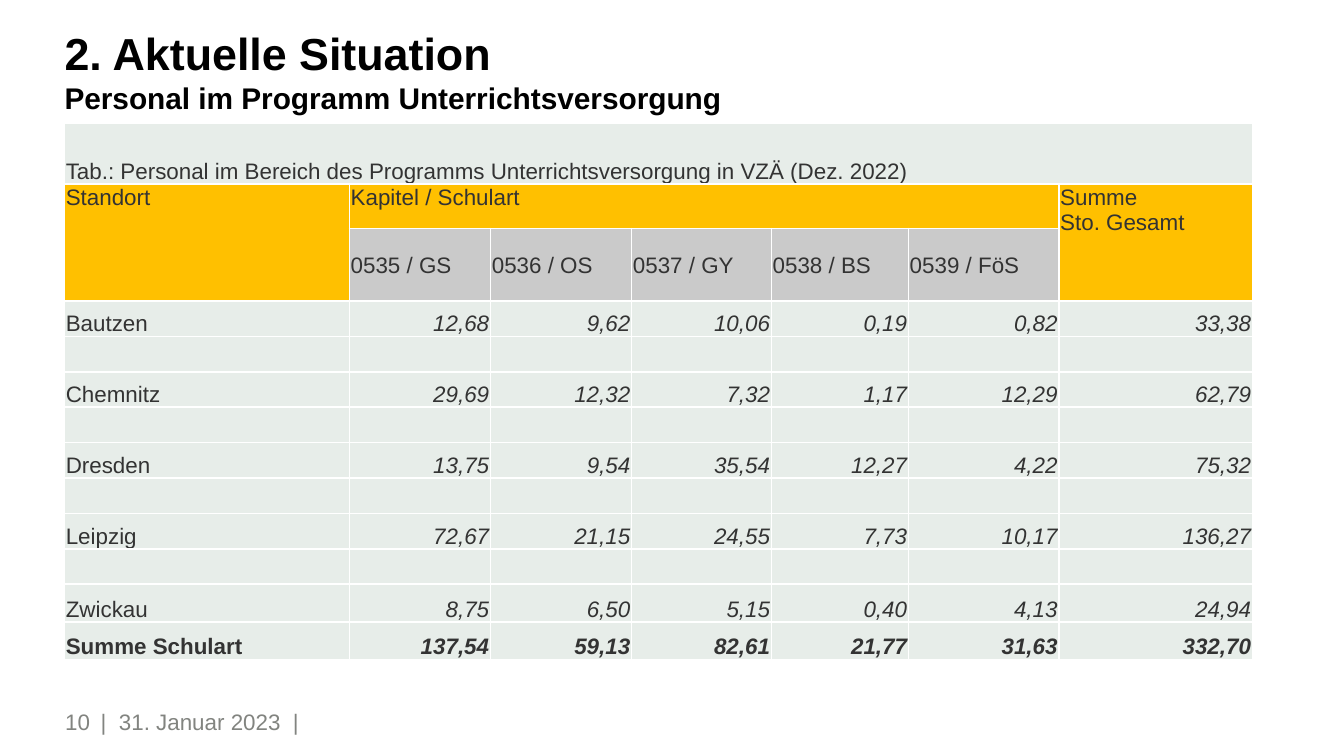
from lxml.etree import SubElement
from pptx import Presentation
from pptx.dml.color import RGBColor
from pptx.enum.text import MSO_ANCHOR, MSO_AUTO_SIZE, PP_ALIGN
from pptx.oxml.ns import qn
from pptx.util import Inches, Pt

COLORS = {
    "title": "000000", "text": "333333", "footer": "828480", "border": "FFFFFF",
    "body": "E7EDE9", "header": "FFC000", "subheader": "CACACA",
}


def add_run(p, text, size, color, bold=False, italic=False):
    r = p.add_run()
    r.text = text
    r.font.name = "Arial"
    r.font.size = Pt(size)
    r.font.bold = bold
    r.font.italic = italic
    r.font.color.rgb = RGBColor.from_string(COLORS[color])


def style_cell(cell, color, anchor):
    """Set margins, white borders and fill; borders must precede the fill."""
    cell.margin_left = cell.margin_right = cell.margin_top = Inches(0.01)
    cell.margin_bottom = 0
    cell.vertical_anchor = anchor
    tc_pr = cell._tc.get_or_add_tcPr()
    for side in ("a:lnL", "a:lnR", "a:lnT", "a:lnB"):
        ln = SubElement(tc_pr, qn(side), w=str(Pt(1)))
        fill = SubElement(ln, qn("a:solidFill"))
        SubElement(fill, qn("a:srgbClr"), val=COLORS["border"])
    cell.fill.solid()
    cell.fill.fore_color.rgb = RGBColor.from_string(COLORS[color])


prs = Presentation()
prs.slide_width = Inches(10)
prs.slide_height = Inches(10 * 9 / 16)
s = prs.slides.add_slide(prs.slide_layouts[5])

# Title
title = s.shapes.title
title.left, title.top = Inches(0.48), Inches(0.45)
title.width, title.height = Inches(7.28), Inches(0.41)
tf = title.text_frame
tf.auto_size = MSO_AUTO_SIZE.NONE
tf.word_wrap = True
tf.vertical_anchor = MSO_ANCHOR.BOTTOM
tf.margin_left = tf.margin_right = tf.margin_top = tf.margin_bottom = 0
p = tf.paragraphs[0]
p.alignment = PP_ALIGN.LEFT
add_run(p, "2. Aktuelle Situation", 24, "title", bold=True)
p.add_line_break()
add_run(p, "Personal im Programm Unterrichtsversorgung", 16, "title", bold=True)

# Footer
for left, width, text, align in [
    (0.75, 4.96, "|  31. Januar 2023  |", PP_ALIGN.LEFT),
    (0, 0.67, "10", PP_ALIGN.RIGHT),
]:
    box = s.shapes.add_textbox(Inches(left), Inches(5.11), Inches(width), Inches(0.52))
    tf = box.text_frame
    tf.word_wrap = True
    tf.vertical_anchor = MSO_ANCHOR.MIDDLE
    tf.margin_left = tf.margin_right = tf.margin_top = tf.margin_bottom = 0
    p = tf.paragraphs[0]
    p.alignment = align
    add_run(p, text, 12, "footer")

# Table: the eight rows from the first site to the last gap share what is left
table_height = 3.99
header_heights = [0.45, 0.33, 0.54]
last_heights = [0.28, 0.28]
site_height = (table_height - sum(header_heights) - sum(last_heights)) / 8
row_heights = header_heights + [site_height] * 8 + last_heights
col_widths = [2.12, 1.05, 1.05, 1.04, 1.02, 1.12, 1.44]

school_types = ["0535 / GS", "0536 / OS", "0537 / GY", "0538 / BS", "0539 / FöS"]
sites = [
    ["Bautzen", "12,68", "9,62", "10,06", "0,19", "0,82", "33,38"],
    ["Chemnitz", "29,69", "12,32", "7,32", "1,17", "12,29", "62,79"],
    ["Dresden", "13,75", "9,54", "35,54", "12,27", "4,22", "75,32"],
    ["Leipzig", "72,67", "21,15", "24,55", "7,73", "10,17", "136,27"],
    ["Zwickau", "8,75", "6,50", "5,15", "0,40", "4,13", "24,94"],
]
totals = ["Summe Schulart", "137,54", "59,13", "82,61", "21,77", "31,63", "332,70"]

blank = [""] * 7
rows = [
    ["Tab.: Personal im Bereich des Programms Unterrichtsversorgung in VZÄ (Dez. 2022)"] + [""] * 6,
    ["Standort", "Kapitel / Schulart", "", "", "", "", "Summe\nSto. Gesamt"],
    ["", *school_types, ""],
]
for site in sites:
    rows += [site, blank]
rows[-1] = totals

table = s.shapes.add_table(len(rows), len(col_widths), Inches(0.48), Inches(0.92),
                           Inches(sum(col_widths)), Inches(table_height)).table
table.first_row = table.horz_banding = False
for column, width in zip(table.columns, col_widths):
    column.width = Inches(width)
for row, height in zip(table.rows, row_heights):
    row.height = Inches(height)
for first, last in [((0, 0), (0, 6)), ((1, 0), (2, 0)), ((1, 1), (1, 5)), ((1, 6), (2, 6))]:
    table.cell(*first).merge(table.cell(*last))

for i, values in enumerate(rows):
    for j, value in enumerate(values):
        cell = table.cell(i, j)
        if i == 2 and 0 < j < 6:
            style_cell(cell, "subheader", MSO_ANCHOR.MIDDLE)
        elif i in (1, 2):
            style_cell(cell, "header", MSO_ANCHOR.TOP)
        else:
            style_cell(cell, "body", MSO_ANCHOR.BOTTOM)
        is_number = i > 2 and j > 0
        tf = cell.text_frame
        for n, line in enumerate(value.split("\n")):
            p = tf.add_paragraph() if n else tf.paragraphs[0]
            if line:
                p.alignment = PP_ALIGN.RIGHT if is_number else PP_ALIGN.LEFT
                add_run(p, line, 12, "text", bold=values is totals, italic=is_number)
            else:
                # Keeps empty rows from growing to the default text size
                SubElement(p._p, qn("a:endParaRPr"), sz="1200")

prs.save("out.pptx")
